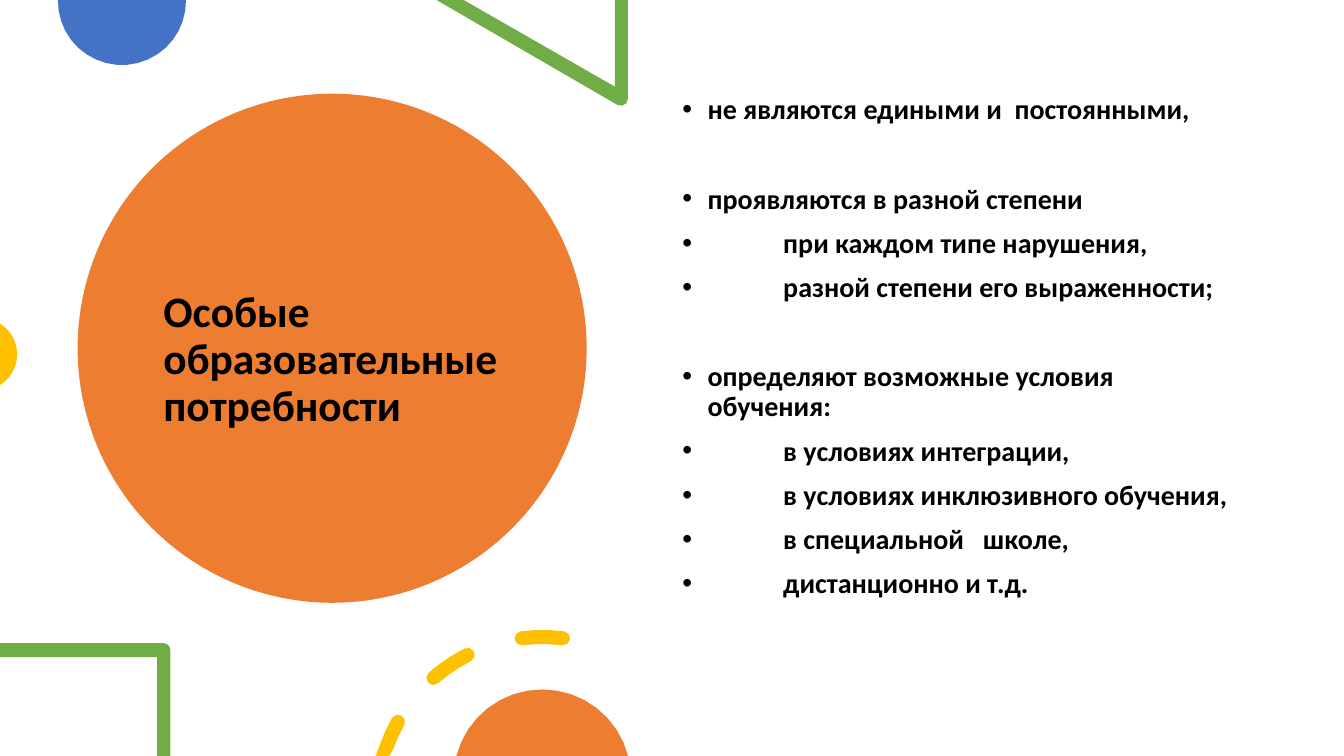
from math import ceil, cos, radians, sin

from lxml import etree
from pptx import Presentation
from pptx.dml.color import RGBColor
from pptx.enum.shapes import MSO_SHAPE
from pptx.enum.text import MSO_ANCHOR, MSO_AUTO_SIZE, PP_ALIGN
from pptx.oxml.ns import qn
from pptx.util import Inches, Pt

ELLIPSE = MSO_SHAPE.OVAL
TOP, MIDDLE = MSO_ANCHOR.TOP, MSO_ANCHOR.MIDDLE
LEFT = PP_ALIGN.LEFT
NO_FIT = MSO_AUTO_SIZE.NONE

# The grid has square cells, ten to the inch.
CELL = Inches(0.1)
COLUMNS, ROWS = 133.33, 75
FINE = 100  # outline units per cell

FONT = "Calibri"
COLOURS = {
    "text": "000000",
    "orange": "ED7D31",
    "blue": "4472C4",
    "green": "70AD47",
    "yellow": "FFC000",
}

TITLE = "Особые образовательные потребности"
# Text, whether it is indented, whether it opens a new group
NEEDS = [
    ("не являются едиными и  постоянными,", False, False),
    ("проявляются в разной степени", False, True),
    ("при каждом типе нарушения,", True, False),
    ("разной степени его выраженности;", True, False),
    ("определяют возможные условия обучения:", False, True),
    ("в условиях интеграции,", True, False),
    ("в условиях инклюзивного обучения,", True, False),
    ("в специальной   школе,", True, False),
    ("дистанционно и т.д.", True, False),
]


def cells(count):
    return round(count * CELL)


def colour(name):
    return RGBColor.from_string(COLOURS[name])


def paint(shape, name):
    shape.fill.solid()
    shape.fill.fore_color.rgb = colour(name)
    shape.line.fill.background()
    shape.shadow.inherit = False


def arc(x, y, radius, start, end, step=10):
    """Points along an arc; angles run clockwise from the right."""
    count = ceil(abs(end - start) / step)
    angles = [radians(start + (end - start) * i / count) for i in range(count + 1)]
    return [(x + radius * cos(a), y + radius * sin(a)) for a in angles]


def dash(x, y, radius, width, start, end):
    """Closed outline of a thick arc with round ends."""
    half = width / 2

    def cap(angle, first):
        a = radians(angle)
        points = arc(x + radius * cos(a), y + radius * sin(a), half, first, first + 180, 45)
        return points[1:-1]

    return (arc(x, y, radius + half, start, end, 5) + cap(end, end)
            + arc(x, y, radius - half, end, start, 5) + cap(start, start + 180))


def add_outline(page, contours, name):
    """Fill the contours as one shape, held within the slide's left, top and bottom edges."""
    builder = None
    for contour in contours:
        points = [(max(x, 0) * FINE, min(max(y, 0), ROWS) * FINE) for x, y in contour]
        if builder is None:
            builder = page.shapes.build_freeform(*points[0], scale=CELL / FINE)
        else:
            builder.move_to(*points[0])
        builder.add_line_segments(points[1:], close=True)
    paint(builder.convert_to_shape(), name)


def place(box, left, top, width, height, anchor):
    box.left, box.top = cells(left), cells(top)
    box.width, box.height = cells(width), cells(height)
    frame = box.text_frame
    frame.word_wrap = True
    frame.auto_size = NO_FIT
    frame.vertical_anchor = anchor
    return frame


def add_text(para, text, size):
    para.alignment = LEFT
    para.line_spacing = 0.9
    span = para.add_run()
    span.text = text
    span.font.name = FONT
    span.font.size = Pt(size)
    span.font.bold = True
    span.font.color.rgb = colour("text")


def add_bullet(para, hang):
    props = para._p.get_or_add_pPr()
    props.set("marL", str(cells(hang)))
    props.set("indent", str(-cells(hang)))
    etree.SubElement(props, qn("a:buFont")).set("typeface", "Arial")
    etree.SubElement(props, qn("a:buChar")).set("char", "•")


def add_title(page):
    title = page.shapes.title
    circle = page.shapes.add_shape(ELLIPSE, cells(7.7), cells(9.3), cells(50.5), cells(50.5))
    paint(circle, "orange")
    title.element.addprevious(circle.element)
    frame = place(title, 15.2, 13.5, 35.4, 44.5, MIDDLE)
    add_text(frame.paragraphs[0], TITLE, 31)


def add_needs(page):
    frame = place(page.placeholders[1], 66.7, 9, 57, 53.5, TOP)
    for index, (text, indented, new_group) in enumerate(NEEDS):
        para = frame.add_paragraph() if index else frame.paragraphs[0]
        add_bullet(para, 10 if indented else 2.5)
        add_text(para, text, 20)
        para.space_before = Pt(0 if index == 0 else 42 if new_group else 10)


def add_decoration(page):
    add_outline(page, [arc(12.1, 0.1, 6.35, -1, 181)], "blue")
    triangle = [(62.3, 0), (61, 0), (61, 8.6), (46, 0), (43.3, 0)]
    add_outline(page, [triangle + arc(61.6, 9.8, 0.7, 120, 0, 40)], "green")
    add_outline(page, [arc(-1.9, 35.15, 3.6, -58, 58)], "yellow")
    corner = [(0, 63.8), (0, 65.2), (15.6, 65.2), (15.6, ROWS), (16.9, ROWS)]
    add_outline(page, [corner + arc(16.2, 64.5, 0.7, 0, -90, 30)], "green")
    middles = [-90 - 34 * i for i in range(3)]
    dashes = [dash(53.8, 79.6, 16.4, 1.4, m - 7.2, m + 7.2) for m in middles]
    add_outline(page, dashes, "yellow")
    add_outline(page, [arc(53.8, 77.2, 8.8, -165.5, -14.5)], "orange")


def main():
    deck = Presentation()
    deck.slide_width, deck.slide_height = cells(COLUMNS), cells(ROWS)
    page = deck.slides.add_slide(deck.slide_layouts[1])
    add_title(page)
    add_needs(page)
    add_decoration(page)
    deck.save("out.pptx")


if __name__ == "__main__":
    main()
